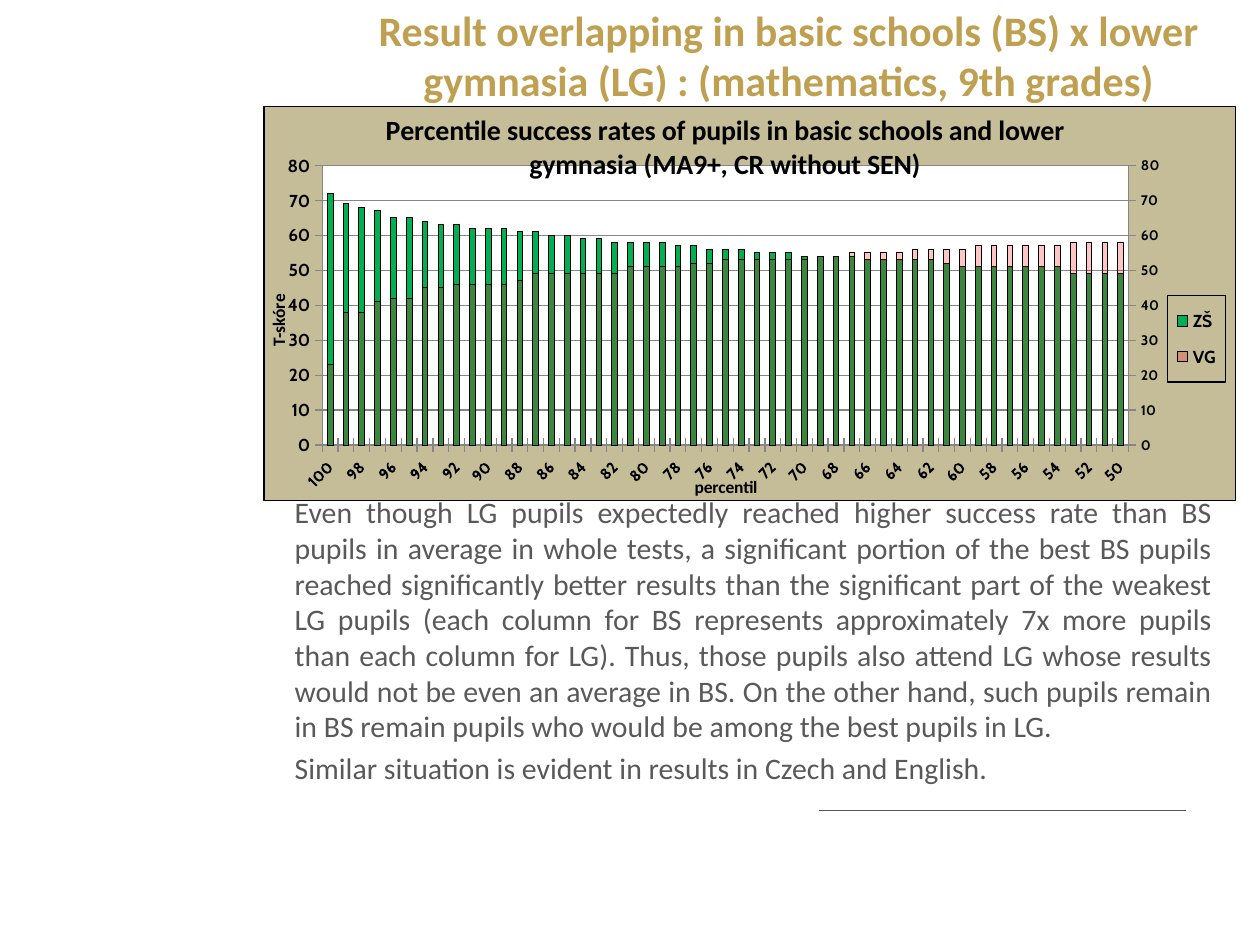
import copy

import lxml.etree
import pptx
import pptx.chart.data
import pptx.dml.color
import pptx.enum.chart
import pptx.enum.shapes
import pptx.enum.text
import pptx.oxml
import pptx.oxml.ns
import pptx.util

Inches = pptx.util.Inches
Pt = pptx.util.Pt
qn = pptx.oxml.ns.qn
Align = pptx.enum.text.PP_ALIGN
Anchor = pptx.enum.text.MSO_ANCHOR

COLORS = {
    "gold": "BFA050", "text": "595959", "rule": "58565B", "black": "000000",
    "sand": "C4BD97", "white": "FFFFFF", "green": "00B050", "red": "FF0000",
    "grid": "868686",
}
BASIC = [72, 69, 68, 67, 65, 65, 64, 63, 63, 62, 62, 62, 61, 61, 60, 60, 59,
         59, 58, 58, 58, 58, 57, 57, 56, 56, 56, 55, 55, 55, 54, 54, 54, 54,
         53, 53, 53, 53, 53, 52, 51, 51, 51, 51, 51, 51, 51, 49, 49, 49, 49]
LOWER = [23, 38, 38, 41, 42, 42, 45, 45, 46, 46, 46, 46, 47, 49, 49, 49, 49,
         49, 49, 51, 51, 51, 51, 52, 52, 53, 53, 53, 53, 53, 53, 54, 54, 55,
         55, 55, 55, 56, 56, 56, 56, 57, 57, 57, 57, 57, 57, 58, 58, 58, 58]
FINDINGS = [
    "Even though LG pupils expectedly reached higher success rate than BS pupils "
    "in average in whole tests, a significant portion of the best BS pupils "
    "reached significantly better results than the significant part of the "
    "weakest LG pupils (each column for BS represents approximately 7x more "
    "pupils than each column for LG). Thus, those pupils also attend LG whose "
    "results would not be even an average in BS. On the other hand, such pupils "
    "remain in BS remain pupils who would be among the best pupils in LG.",
    "Similar situation is evident in results in Czech and English.",
]


def rgb(name):
    return pptx.dml.color.RGBColor.from_string(COLORS[name])


def set_font(font, size, bold=True, face="Calibri", color="black"):
    font.size = Pt(size)
    font.bold = bold
    font.name = face
    font.color.rgb = rgb(color)


def write_text(para, text, align=None, before=None, **style):
    if align is not None:
        para.alignment = align
    if before is not None:
        para.space_before = Pt(before)
    span = para.add_run()
    span.text = text
    set_font(span.font, **style)


def add_box(page, left, top, width, height, anchor):
    box = page.shapes.add_textbox(Inches(left), Inches(top), Inches(width), Inches(height))
    box.text_frame.word_wrap = True
    box.text_frame.vertical_anchor = anchor
    return box.text_frame


def add_heading(page, *bounds):
    frame = add_box(page, *bounds, Anchor.MIDDLE)
    write_text(frame.paragraphs[0],
               "Result overlapping in basic schools (BS) x lower gymnasia (LG) : "
               "(mathematics, 9th grades)", align=Align.CENTER, size=24, color="gold")


def add_findings(page, *bounds):
    frame = add_box(page, *bounds, Anchor.TOP)
    for index, text in enumerate(FINDINGS):
        para = frame.add_paragraph() if index else frame.paragraphs[0]
        write_text(para, text, align=Align.JUSTIFY, before=3.4 if index else 0,
                   size=17, bold=False, color="text")


def add_rule(page, left, top, width):
    rule = page.shapes.add_connector(pptx.enum.shapes.MSO_CONNECTOR.STRAIGHT,
                                     Inches(left + width), Inches(top), Inches(left), Inches(top))
    rule.line.color.rgb = rgb("rule")
    rule.line.width = Pt(0.75)
    lxml.etree.SubElement(rule.element.spPr, qn("a:effectLst"))


def set_layout(element, index, **parts):
    for old in element.findall(qn("c:layout")):
        element.remove(old)
    layout = lxml.etree.Element(qn("c:layout"))
    manual = lxml.etree.SubElement(layout, qn("c:manualLayout"))
    if element.tag == qn("c:plotArea"):
        lxml.etree.SubElement(manual, qn("c:layoutTarget")).set("val", "inner")
    for mode in ("xMode", "yMode"):
        lxml.etree.SubElement(manual, qn("c:" + mode)).set("val", "edge")
    for name, value in parts.items():
        lxml.etree.SubElement(manual, qn("c:" + name)).set("val", str(value))
    element.insert(index, layout)


def area_style(fill=None, border=None):
    def solid(name):
        return f'<a:solidFill><a:srgbClr val="{COLORS[name]}"/></a:solidFill>' if name else "<a:noFill/>"
    return pptx.oxml.parse_xml(
        f'<c:spPr {pptx.oxml.ns.nsdecls("c", "a")}>{solid(fill)}'
        f'<a:ln w="{Pt(0.75)}">{solid(border)}</a:ln></c:spPr>')


def title_part(owner, text, size, x, y):
    write_text(owner.text_frame.paragraphs[0], text, size=size)
    title = owner.text_frame._txBody.getparent().getparent()
    set_layout(title, 1, x=x, y=y)
    return title


def style_axis(axis, size):
    axis.major_tick_mark = pptx.enum.chart.XL_TICK_MARK.CROSS
    axis.format.line.color.rgb = rgb("grid")
    set_font(axis.tick_labels.font, size, face="Cabin")


def move_to_right_axis(area):
    bars, category, value = (area.find(qn("c:" + tag)) for tag in ("barChart", "catAx", "valAx"))
    right_bars, right_category, right_value = map(copy.deepcopy, (bars, category, value))
    bars.remove(bars.findall(qn("c:ser"))[1])
    right_bars.remove(right_bars.find(qn("c:ser")))
    bars.addnext(right_bars)
    value.addnext(right_value)
    right_value.addnext(right_category)

    for axis in (right_category, right_value):
        for tag in ("c:title", "c:majorGridlines"):
            for part in axis.findall(qn(tag)):
                axis.remove(part)
    ids = {category.find(qn("c:axId")).get("val"): "5001", value.find(qn("c:axId")).get("val"): "5002"}
    for part in (right_bars, right_category, right_value):
        for reference in part.findall(qn("c:axId")) + part.findall(qn("c:crossAx")):
            reference.set("val", ids[reference.get("val")])
    right_category.find(qn("c:delete")).set("val", "1")
    right_value.find(qn("c:axPos")).set("val", "r")
    right_value.find(qn("c:crosses")).set("val", "max")
    right_value.find(".//" + qn("a:defRPr")).set("sz", "800")


def add_percentile_chart(page, left, top, width, height):
    data = pptx.chart.data.CategoryChartData(number_format="0")
    data.categories = [str(percentile) for percentile in range(100, 49, -1)]
    data.add_series("ZŠ", BASIC)
    data.add_series("VG", LOWER)
    chart = page.shapes.add_chart(pptx.enum.chart.XL_CHART_TYPE.COLUMN_CLUSTERED, Inches(left),
                                  Inches(top), Inches(width), Inches(height), data).chart
    set_font(chart.font, 10, bold=False)
    title_part(chart.chart_title, "Percentile success rates of pupils in basic schools and lower "
               "gymnasia (MA9+, CR without SEN)", 16, 0.12, 0)

    category, value = chart.category_axis, chart.value_axis
    style_axis(category, 9)
    title_part(category.axis_title, "percentil", 10, 0.44, 0.93)
    category._element.find(qn("c:txPr")).find(qn("a:bodyPr")).set("rot", "-2700000")
    spacing = lxml.etree.Element(qn("c:tickLblSkip"))
    spacing.set("val", "2")
    category._element.find(qn("c:noMultiLvlLbl")).addprevious(spacing)

    style_axis(value, 10)
    value_title = title_part(value.axis_title, "T-skóre", 10, 0, 0.47)
    value_title.find(".//" + qn("a:bodyPr")).set("rot", "-5400000")
    value.minimum_scale, value.maximum_scale, value.major_unit = 0, 80, 10
    value.tick_labels.number_format = "#,##0"
    value.tick_labels.number_format_is_linked = False
    value.major_gridlines.format.line.color.rgb = rgb("grid")

    plot = chart.plots[0]
    plot.gap_width, plot.overlap, plot.vary_by_categories = 180, 10, False
    for series, color in zip(plot.series, ("green", "red")):
        series.format.fill.solid()
        series.format.fill.fore_color.rgb = rgb(color)
        series.format.line.color.rgb = rgb("black")
        series.format.line.width = Pt(0.5)
    tint = plot.series[1]._element.find(qn("c:spPr")).find(qn("a:solidFill"))[0]
    lxml.etree.SubElement(tint, qn("a:alpha")).set("val", "23000")

    chart.has_legend = True
    chart.legend.include_in_layout = False
    set_font(chart.legend.font, 10, face="Cabin")
    body = chart.element.find(qn("c:chart"))
    legend, area = body.find(qn("c:legend")), body.find(qn("c:plotArea"))
    set_layout(legend, 1, x=0.93, y=0.48, w=0.06, h=0.22)
    legend.find(qn("c:overlay")).addnext(area_style(border="black"))
    move_to_right_axis(area)
    set_layout(area, 0, x=0.06, y=0.15, w=0.83, h=0.71)
    area.append(area_style(fill="white"))
    body.addnext(area_style(fill="sand", border="black"))


def main():
    deck = pptx.Presentation()
    deck.slide_width, deck.slide_height = Inches(10), Inches(7.5)
    page = deck.slides.add_slide(deck.slide_layouts[6])
    add_rule(page, 6.5, 6.43, 2.91)
    add_heading(page, 2.52, 0, 7.48, 0.87)
    add_findings(page, 2.24, 3.87, 7.48, 2.55)
    add_percentile_chart(page, 2.09, 0.84, 7.72, 3.15)
    deck.save("out.pptx")


if __name__ == "__main__":
    main()
